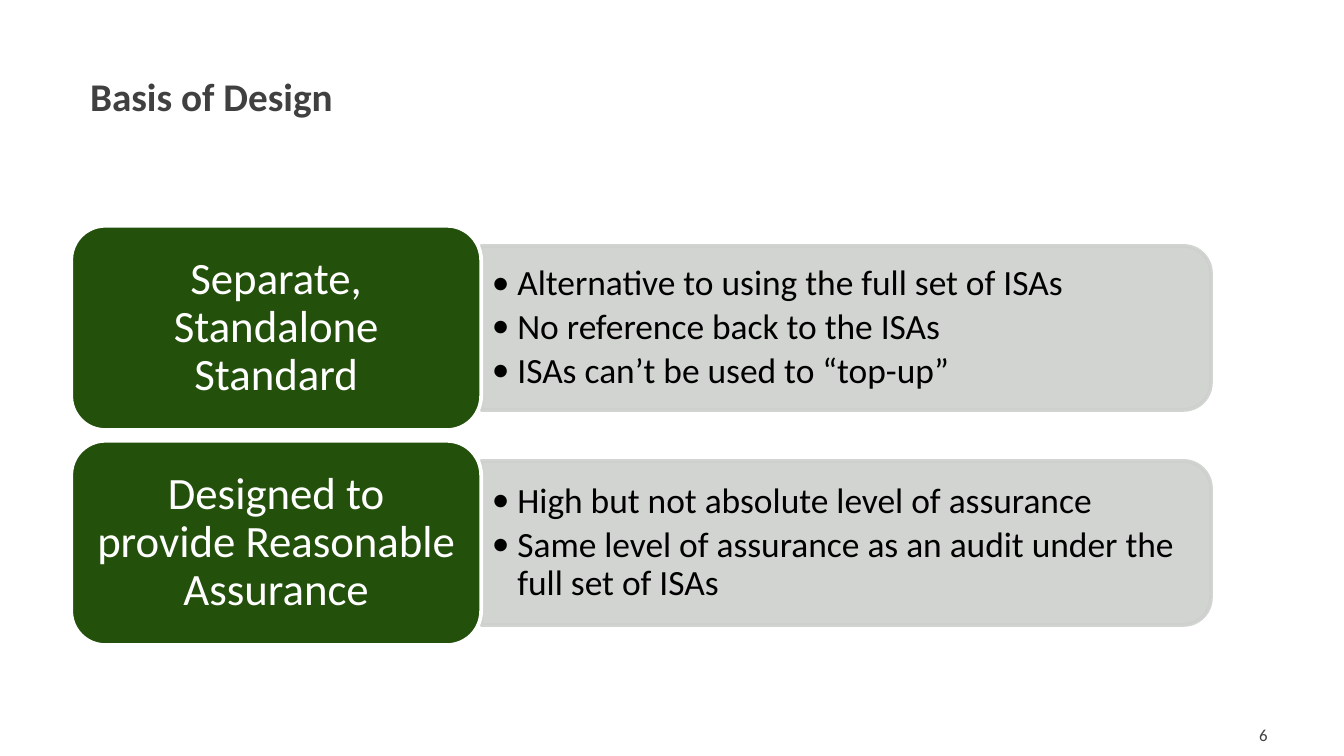
from lxml.etree import SubElement
from pptx import Presentation
from pptx.dml.color import RGBColor
from pptx.enum.shapes import MSO_SHAPE
from pptx.enum.text import MSO_ANCHOR, MSO_AUTO_SIZE, PP_ALIGN
from pptx.oxml.ns import qn
from pptx.util import Inches, Pt

GREEN, GRAY, DARK, WHITE, BLACK = "23500B", "CDD0CC", "404040", "FFFFFF", "000000"
ROW_LEFT, ROW_TOP, ROW_HEIGHT, ROW_PITCH = 0.53, 1.68, 1.52, 1.6
LABEL_WIDTH, PANEL_WIDTH, PANEL_HEIGHT = 3.05, 5.43, 1.22
ROWS = [
    ("Separate, Standalone Standard",
     ["Alternative to using the full set of ISAs",
      "No reference back to the ISAs",
      "ISAs can’t be used to “top-up”"]),
    ("Designed to provide Reasonable Assurance",
     ["High but not absolute level of assurance",
      "Same level of assurance as an audit under the full set of ISAs"]),
]


def color(value):
    return RGBColor.from_string(value)


def add_bullet(paragraph, indent=0.19):
    properties = paragraph._p.get_or_add_pPr()
    properties.set("marL", str(Inches(indent)))
    properties.set("indent", str(-Inches(indent)))
    SubElement(properties, qn("a:buFont")).set("typeface", "Calibri")
    SubElement(properties, qn("a:buChar")).set("char", "•")


def write_text(shape, lines, size, fill, bold=False, align=PP_ALIGN.LEFT,
               anchor=MSO_ANCHOR.MIDDLE, spacing=None, after=0, bullets=False):
    frame = shape.text_frame
    frame.word_wrap = True
    frame.auto_size = MSO_AUTO_SIZE.NONE
    frame.vertical_anchor = anchor
    for index, line in enumerate(lines):
        paragraph = frame.add_paragraph() if index else frame.paragraphs[0]
        if bullets:
            add_bullet(paragraph)
        paragraph.alignment = align
        paragraph.line_spacing = spacing
        paragraph.space_after = Pt(after)
        run = paragraph.add_run()
        run.text = line
        run.font.name = "Calibri"
        run.font.size = Pt(size)
        run.font.bold = bold
        run.font.color.rgb = color(fill)


def add_block(slide, preset, left, top, width, height, fill, line, opacity=None):
    shape = slide.shapes.add_shape(
        preset, Inches(left), Inches(top), Inches(width), Inches(height))
    shape.shadow.inherit = False
    shape.fill.solid()
    shape.fill.fore_color.rgb = color(fill)
    shape.line.color.rgb = color(line)
    shape.line.width = Pt(2)
    if opacity:
        for element in shape._element.spPr.iter(qn("a:srgbClr")):
            SubElement(element, qn("a:alpha")).set("val", str(opacity * 1000))
    return shape


def add_title(slide, left, top, width, height, text):
    title = slide.shapes.title
    title.left, title.top = Inches(left), Inches(top)
    title.width, title.height = Inches(width), Inches(height)
    write_text(title, [text], 21, DARK, bold=True, anchor=MSO_ANCHOR.TOP,
               spacing=1.1, after=3)


def add_text_box(slide, left, top, width, height):
    return slide.shapes.add_textbox(
        Inches(left), Inches(top), Inches(width), Inches(height))


def add_row(slide, left, top, label, points):
    """Place a label block with a panel of points to its right."""
    panel_left = left + LABEL_WIDTH
    middle = top + ROW_HEIGHT / 2
    # The panel is a tall shape turned a quarter, so its round corners face right.
    panel = add_block(
        slide, MSO_SHAPE.ROUND_2_SAME_RECTANGLE,
        panel_left + (PANEL_WIDTH - PANEL_HEIGHT) / 2, middle - PANEL_WIDTH / 2,
        PANEL_HEIGHT, PANEL_WIDTH, GRAY, GRAY, opacity=90)
    panel.rotation = 90

    box = add_text_box(slide, panel_left, middle - 0.55, 5.37, 1.1)
    frame = box.text_frame
    frame.margin_left = frame.margin_right = Inches(0.08)
    frame.margin_top = frame.margin_bottom = Inches(0.04)
    write_text(box, points, 19, BLACK, spacing=0.9, after=2.85, bullets=True)

    block = add_block(slide, MSO_SHAPE.ROUNDED_RECTANGLE, left, top,
                      LABEL_WIDTH, ROW_HEIGHT, GREEN, WHITE)
    write_text(block, [label], 24, WHITE, align=PP_ALIGN.CENTER,
               spacing=0.9, after=8.4)


def main():
    presentation = Presentation()
    presentation.slide_width = Inches(10)
    presentation.slide_height = presentation.slide_width * 9 // 16
    slide = presentation.slides.add_slide(presentation.slide_layouts[5])
    add_title(slide, 0.57, 0.45, 3.42, 0.53, "Basis of Design")
    for index, (label, points) in enumerate(ROWS):
        add_row(slide, ROW_LEFT, ROW_TOP + index * ROW_PITCH, label, points)
    page_number = add_text_box(slide, 7.28, 5.32, 2.25, 0.3)
    write_text(page_number, ["6"], 9, DARK, align=PP_ALIGN.RIGHT)
    presentation.save("out.pptx")


if __name__ == "__main__":
    main()
